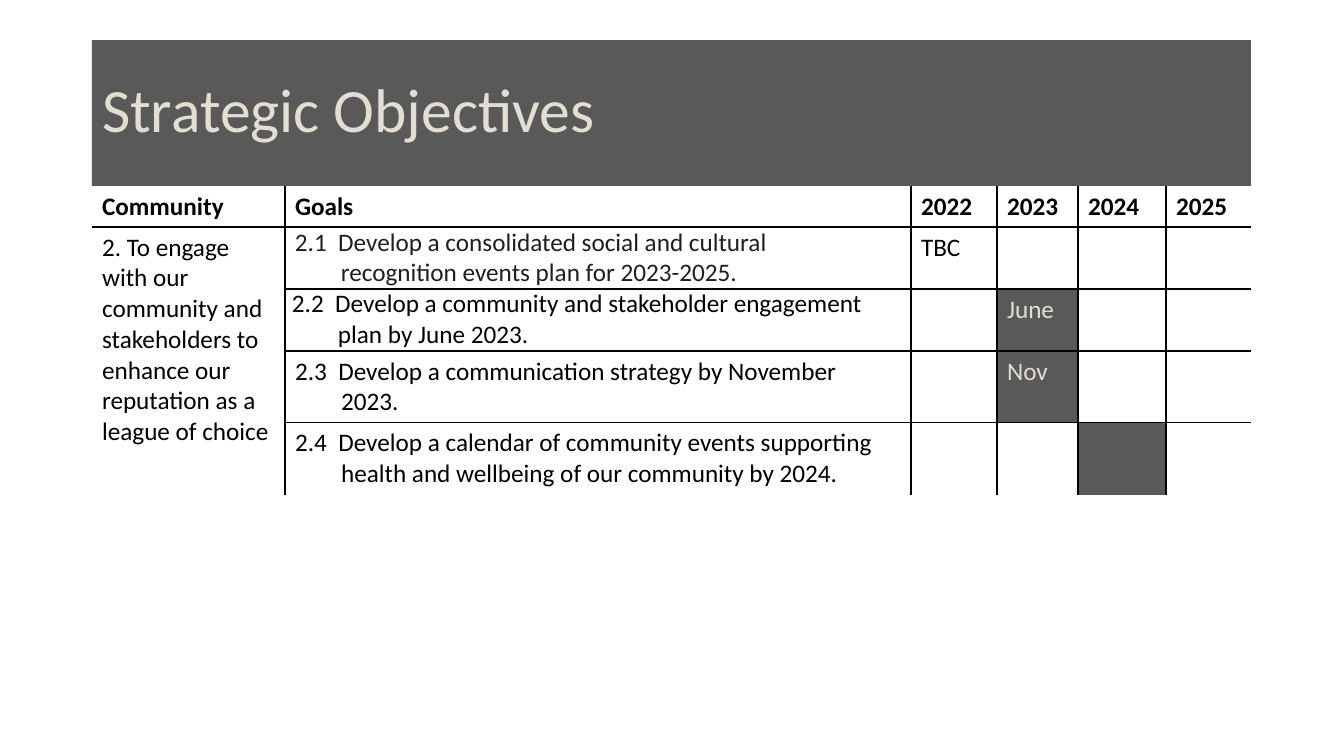
from lxml.etree import SubElement
from pptx import Presentation
from pptx.dml.color import RGBColor
from pptx.enum.text import MSO_ANCHOR, MSO_AUTO_SIZE, PP_ALIGN
from pptx.oxml.ns import qn
from pptx.util import Emu, Pt

COLORS = {"band": "595959", "cream": "E3DED1", "black": "000000", "ink": "201F1E"}
FONT = "Calibri"
LEFT, TOP, TITLE_HEIGHT = 92, 40, 146
COLUMN_WIDTHS = [193, 626, 86, 81, 88, 85]
ROW_HEIGHTS = [41, 62, 62, 71, 72]
HANGING = 46
HEADERS = ["Community", "Goals", "2022", "2023", "2024", "2025"]
OBJECTIVE = ("2. To engage with our community and stakeholders to enhance "
             "our reputation as a league of choice")
GOALS = [
    ("2.1  Develop a consolidated social and cultural",
     "recognition events plan for 2023-2025."),
    ("2.2  Develop a community and stakeholder engagement",
     "plan by June 2023."),
    ("2.3  Develop a communication strategy by November",
     "2023."),
    ("2.4  Develop a calendar of community events supporting",
     "health and wellbeing of our community by 2024."),
]
TIGHT_GOAL_INSETS = {1: 10, 2: 7}
DATES = {(1, 2): "TBC", (2, 3): "June", (3, 3): "Nov"}
SHADED = {(2, 3), (3, 3), (4, 4)}


def px(length):
    return Emu(round(length * 914400 / 100.8))


def write(paragraph, text, size=18, color="black", bold=False, spacing=None, margin=0):
    paragraph.alignment = PP_ALIGN.LEFT
    paragraph.line_spacing = spacing
    if margin:
        paragraph._p.get_or_add_pPr().set("marL", str(px(margin)))
    run = paragraph.add_run()
    run.text = text
    run.font.name = FONT
    run.font.size = Pt(size)
    run.font.bold = bold
    run.font.color.rgb = RGBColor.from_string(COLORS[color])


def set_borders(cell, visible):
    properties = cell._tc.get_or_add_tcPr()
    for side in "LRTB":
        line = SubElement(properties, qn(f"a:ln{side}"), w=str(Pt(1)))
        if side in visible:
            fill = SubElement(line, qn("a:solidFill"))
            SubElement(fill, qn("a:srgbClr"), val=COLORS["black"])
        else:
            SubElement(line, qn("a:noFill"))


def inner_sides(row, column):
    last_row, last_column = len(ROW_HEIGHTS) - 1, len(COLUMN_WIDTHS) - 1
    rules = {
        "L": column > 0,
        "R": column < last_column,
        "T": row > 0 and (column > 0 or row == 1),
        "B": row < last_row and (column > 0 or row == 0),
    }
    return [side for side, shown in rules.items() if shown]


def add_title(slide):
    title = slide.shapes.title
    title.left, title.top = px(LEFT), px(TOP)
    title.width, title.height = px(sum(COLUMN_WIDTHS)), px(TITLE_HEIGHT)
    title.fill.solid()
    title.fill.fore_color.rgb = RGBColor.from_string(COLORS["band"])
    frame = title.text_frame
    frame.auto_size = MSO_AUTO_SIZE.NONE
    frame.vertical_anchor = MSO_ANCHOR.MIDDLE
    write(frame.paragraphs[0], "Strategic Objectives", size=44, color="cream", spacing=0.9)


def write_goal(cell, row):
    frame = cell.text_frame
    color = "ink" if row == 1 else "black"
    if row in TIGHT_GOAL_INSETS:
        cell.margin_left, cell.margin_right = px(TIGHT_GOAL_INSETS[row]), px(7)
        cell.margin_top = cell.margin_bottom = 0
    first_line, second_line = GOALS[row - 1]
    write(frame.paragraphs[0], first_line, color=color)
    write(frame.add_paragraph(), second_line, color=color, margin=HANGING)


def add_plan_table(slide):
    graphic_frame = slide.shapes.add_table(
        len(ROW_HEIGHTS), len(COLUMN_WIDTHS), px(LEFT), px(TOP + TITLE_HEIGHT),
        px(sum(COLUMN_WIDTHS)), px(sum(ROW_HEIGHTS)))
    table = graphic_frame.table
    table.first_row = table.horz_banding = False
    for column, width in enumerate(COLUMN_WIDTHS):
        table.columns[column].width = px(width)
    for row, height in enumerate(ROW_HEIGHTS):
        table.rows[row].height = px(height)
        for column in range(len(COLUMN_WIDTHS)):
            cell = table.cell(row, column)
            set_borders(cell, inner_sides(row, column))
            shaded = (row, column) in SHADED
            if shaded:
                cell.fill.solid()
                cell.fill.fore_color.rgb = RGBColor.from_string(COLORS["band"])
            else:
                cell.fill.background()
            paragraph = cell.text_frame.paragraphs[0]
            if row == 0:
                write(paragraph, HEADERS[column], bold=True)
            elif column == 1:
                write_goal(cell, row)
            elif (row, column) in DATES:
                write(paragraph, DATES[row, column], color="cream" if shaded else "black")
    objective = table.cell(1, 0)
    objective.merge(table.cell(len(ROW_HEIGHTS) - 1, 0))
    write(objective.text_frame.paragraphs[0], OBJECTIVE)


def main():
    presentation = Presentation()
    presentation.slide_width, presentation.slide_height = px(1344), px(756)
    slide = presentation.slides.add_slide(presentation.slide_layouts[5])
    add_title(slide)
    add_plan_table(slide)
    presentation.save("out.pptx")


if __name__ == "__main__":
    main()
